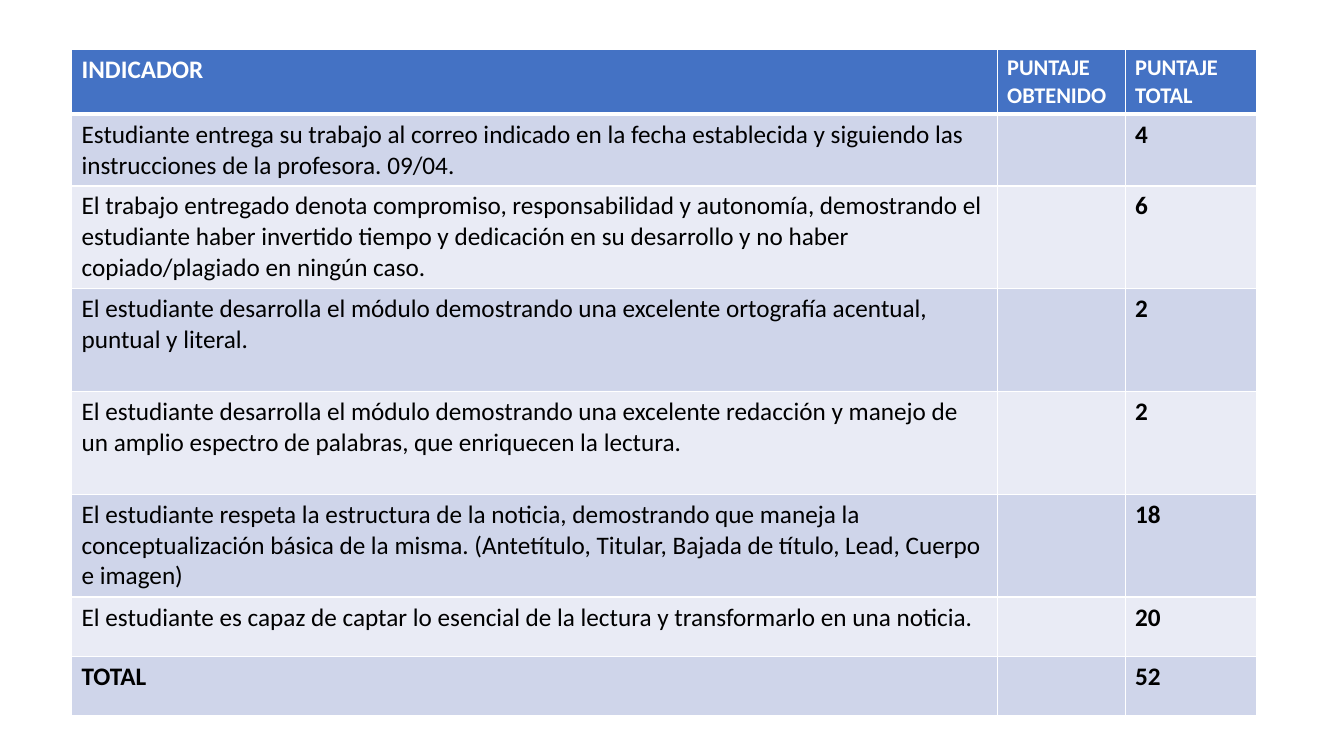
import pptx
import pptx.dml.color
import pptx.util
from lxml import etree
from pptx.oxml.ns import qn

Inches = pptx.util.Inches
Pt = pptx.util.Pt

HEADINGS = ["INDICADOR", "PUNTAJE OBTENIDO", "PUNTAJE TOTAL"]
INDICATORS = [
    ("Estudiante entrega su trabajo al correo indicado en la fecha establecida "
     "y siguiendo las instrucciones de la profesora. 09/04.", 4, 0.7),
    ("El trabajo entregado denota compromiso, responsabilidad y autonomía, "
     "demostrando el estudiante haber invertido tiempo y dedicación en su "
     "desarrollo y no haber copiado/plagiado en ningún caso.", 6, 1.02),
    ("El estudiante desarrolla el módulo demostrando una excelente ortografía "
     "acentual, puntual y literal.", 2, 1.02),
    ("El estudiante desarrolla el módulo demostrando una excelente redacción y "
     "manejo de un amplio espectro de palabras, que enriquecen la lectura.", 2, 1.02),
    ("El estudiante respeta la estructura de la noticia, demostrando que maneja la "
     "conceptualización básica de la misma. (Antetítulo, Titular, Bajada de título, "
     "Lead, Cuerpo e imagen)", 18, 1.02),
    ("El estudiante es capaz de captar lo esencial de la lectura y transformarlo "
     "en una noticia.", 20, 0.59),
]
HEADER_HEIGHT = 0.63
TOTAL_HEIGHT = 0.59
COLUMN_WIDTHS = [9.18, 1.27, 1.3]


def color(hex_value):
    return pptx.dml.color.RGBColor.from_string(hex_value)


class RubricSlide:
    font = "Calibri"
    white = "FFFFFF"
    black = "000000"
    header_fill = "4472C4"
    band_fills = ["E9EBF5", "CFD5EA"]

    def __init__(self, presentation):
        self.slide = presentation.slides.add_slide(presentation.slide_layouts[6])

    def add_table(self, left, top, column_widths, row_heights):
        table = self.slide.shapes.add_table(
            len(row_heights), len(column_widths), Inches(left), Inches(top),
            Inches(sum(column_widths)), Inches(sum(row_heights))).table
        for column, width in zip(table.columns, column_widths):
            column.width = Inches(width)
        for row, height in zip(table.rows, row_heights):
            row.height = Inches(height)
        return table

    def set_borders(self, cell, top, bottom):
        """Draw white cell borders; top and bottom are widths in points."""
        properties = cell._tc.get_or_add_tcPr()
        for side, width in (("L", 1), ("R", 1), ("T", top), ("B", bottom)):
            line = etree.SubElement(properties, qn(f"a:ln{side}"), w=str(Pt(width)))
            fill = etree.SubElement(line, qn("a:solidFill"))
            etree.SubElement(fill, qn("a:srgbClr"), val=self.white)

    def fill_row(self, table, row_index, texts, bold_flags, sizes):
        is_header = row_index == 0
        fill = self.header_fill if is_header else self.band_fills[row_index % 2]
        text_color = self.white if is_header else self.black
        for column_index, text in enumerate(texts):
            cell = table.cell(row_index, column_index)
            self.set_borders(cell, top=3 if row_index == 1 else 1,
                             bottom=3 if is_header else 1)
            cell.fill.solid()
            cell.fill.fore_color.rgb = color(fill)
            cell.text_frame.text = text
            for run in cell.text_frame.paragraphs[0].runs:
                run.font.name = self.font
                run.font.size = Pt(sizes[column_index])
                run.font.bold = bold_flags[column_index]
                run.font.color.rgb = color(text_color)


def main():
    presentation = pptx.Presentation()
    presentation.slide_width = Inches(13.33)
    presentation.slide_height = Inches(7.5)

    rubric = RubricSlide(presentation)
    row_heights = [HEADER_HEIGHT, *(height for _, _, height in INDICATORS), TOTAL_HEIGHT]
    table = rubric.add_table(0.71, 0.49, COLUMN_WIDTHS, row_heights)

    all_bold = [True] * 3
    body_sizes = [18] * 3
    rubric.fill_row(table, 0, HEADINGS, all_bold, [18, 16, 16])
    for row_index, (indicator, points, _) in enumerate(INDICATORS, start=1):
        rubric.fill_row(table, row_index, [indicator, "", str(points)],
                        [False, False, True], body_sizes)
    total = sum(points for _, points, _ in INDICATORS)
    rubric.fill_row(table, len(INDICATORS) + 1, ["TOTAL", "", str(total)],
                    all_bold, body_sizes)

    presentation.save("out.pptx")


if __name__ == "__main__":
    main()
